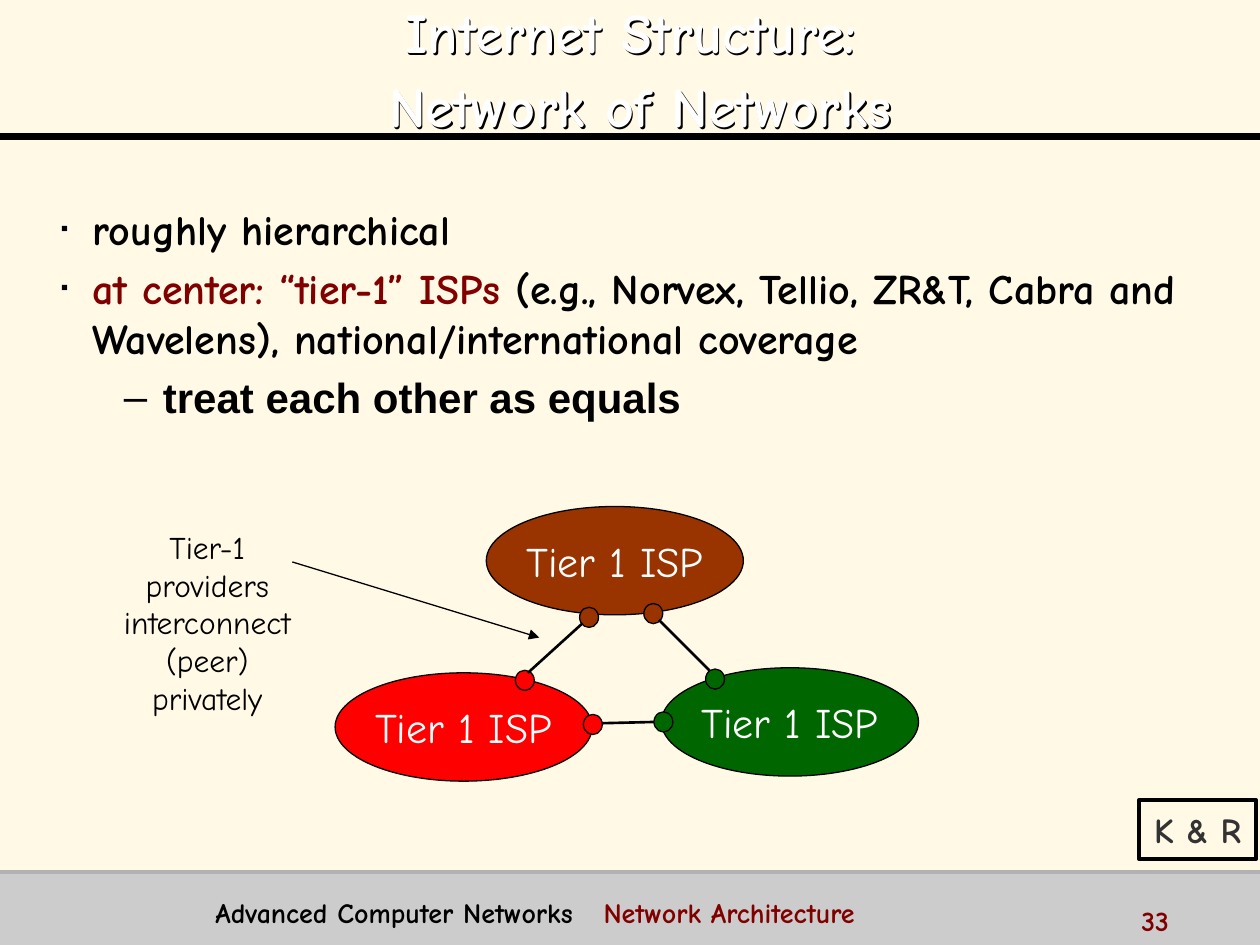
"""Build the slide on tier-1 providers at the centre of the Internet."""

from dataclasses import dataclass

import pptx
import pptx.dml.color
import pptx.enum.shapes
import pptx.enum.text
import pptx.oxml.ns
import pptx.util
from lxml import etree

COLORS = {
    "cream": "FFF9E6", "black": "000000", "white": "FFFFFF", "gray": "CCCCCC",
    "rule": "B2B2B2", "charcoal": "333333", "maroon": "800000",
    "red": "FF0000", "brown": "993300", "green": "006600",
}
COLUMNS, ROWS = 100, 75
WIDTH, HEIGHT = pptx.util.Inches(10), pptx.util.Inches(7.5)
FONT = "Comic Neue"
ISP_SIZE = (20.4, 8.6)
DOT_SIZE = (1.5, 1.6)
OVAL = pptx.enum.shapes.MSO_SHAPE.OVAL
RECTANGLE = pptx.enum.shapes.MSO_SHAPE.RECTANGLE
CENTER = pptx.enum.text.PP_ALIGN.CENTER
MIDDLE = pptx.enum.text.MSO_ANCHOR.MIDDLE


@dataclass
class Provider:
    column: float
    row: float
    color: str
    dots: tuple


@dataclass
class Line:
    start: tuple
    end: tuple
    color: str = "black"
    weight: float = 1.5
    arrow: bool = False


@dataclass
class Span:
    text: str
    color: str = "black"
    size: float = 24
    bold: bool = True
    font: str = FONT


@dataclass
class Bullet:
    spans: tuple
    mark: str
    indent: float
    hanging: float
    percent: int = 100


PROVIDERS = (
    Provider(26.6, 53.4, "red", ((40.9, 53.2), (46.3, 56.7))),
    Provider(38.6, 40.2, "brown", ((51.1, 47.9), (46, 48.2))),
    Provider(52.5, 53, "green", ((56, 53.1), (51.9, 56.5))),
)
RULES = (
    Line((0, 10.8), (COLUMNS, 10.8), weight=4),
    Line((0, 69.2), (COLUMNS, 69.2), "rule", 2),
)
LINKS = (
    Line((47.8, 57.4), (51.9, 57.3)),
    Line((52.3, 49.2), (56.3, 53.2)),
    Line((41.9, 53.4), (46.2, 49.5)),
    Line((23.2, 44.6), (42.8, 50.6), weight=0.75, arrow=True),
)
BULLETS = (
    Bullet((Span("roughly hierarchical"),), "▪", 0.25, 0.25, 50),
    Bullet((Span("at center: “tier-1” ISPs ", "maroon"),
            Span("(e.g., Norvex, Tellio, ZR&T, Cabra and "
                 "Wavelens), national/international coverage")), "▪", 0.25, 0.25, 50),
    Bullet((Span("treat each other as equals", font="Arial"),), "–", 0.81, 0.31),
)


def rgb(name: str) -> pptx.dml.color.RGBColor:
    return pptx.dml.color.RGBColor.from_string(COLORS[name])


def across(columns: float) -> int:
    return round(WIDTH * columns / COLUMNS)


def down(rows: float) -> int:
    return round(HEIGHT * rows / ROWS)


def place(left: float, top: float, width: float, height: float) -> tuple:
    return across(left), down(top), across(width), down(height)


def add_element(parent, tag: str, **attributes: str):
    element = etree.SubElement(parent, pptx.oxml.ns.qn(tag))
    for key, value in attributes.items():
        element.set(key, value)
    return element


def format_run(run, span: Span) -> None:
    run.font.name = span.font
    run.font.size = pptx.util.Pt(span.size)
    run.font.bold = span.bold
    run.font.color.rgb = rgb(span.color)


def write(paragraph, *spans: Span) -> None:
    for span in spans:
        run = paragraph.add_run()
        run.text = span.text
        format_run(run, span)


def add_shape(slide, kind, box: tuple, fill: str = "", line: str = "", weight: float = 0.75):
    shape = slide.shapes.add_shape(kind, *place(*box))
    shape.shadow.inherit = False
    if fill:
        shape.fill.solid()
        shape.fill.fore_color.rgb = rgb(fill)
    else:
        shape.fill.background()
    if line:
        shape.line.color.rgb = rgb(line)
        shape.line.width = pptx.util.Pt(weight)
    else:
        shape.line.fill.background()
    return shape


def label(shape, span: Span) -> None:
    shape.text_frame.word_wrap = False
    shape.text_frame.vertical_anchor = MIDDLE
    paragraph = shape.text_frame.paragraphs[0]
    paragraph.alignment = CENTER
    write(paragraph, span)


def add_line(slide, line: Line) -> None:
    connector = slide.shapes.add_connector(
        pptx.enum.shapes.MSO_CONNECTOR.STRAIGHT,
        across(line.start[0]), down(line.start[1]), across(line.end[0]), down(line.end[1]))
    connector.line.color.rgb = rgb(line.color)
    connector.line.width = pptx.util.Pt(line.weight)
    if line.arrow:
        add_element(connector.line._get_or_add_ln(), "a:tailEnd", type="triangle")
    add_element(connector._element.spPr, "a:effectLst")


def add_text(slide, box: tuple, *spans: Span):
    frame = slide.shapes.add_textbox(*place(*box)).text_frame
    frame.word_wrap = True
    write(frame.paragraphs[0], *spans)
    return frame


def add_title(slide) -> None:
    title = slide.shapes.title
    title.left, title.top, title.width, title.height = place(5.8, -1.1, 88.5, 12.5)
    title.fill.background()
    title.line.fill.background()
    effects = add_element(title._element.spPr, "a:effectLst")
    shadow = add_element(effects, "a:outerShdw", dist="17961", dir="2700000",
                         algn="ctr", rotWithShape="0")
    add_element(shadow, "a:srgbClr", val=COLORS["black"])
    frame = title.text_frame
    frame.text = "Internet Structure:\v Network of Networks"
    frame.auto_size = pptx.enum.text.MSO_AUTO_SIZE.NONE
    frame.vertical_anchor = MIDDLE
    paragraph = frame.paragraphs[0]
    paragraph.alignment = CENTER
    paragraph.line_spacing = 1.1
    for run in paragraph.runs:
        format_run(run, Span(run.text, "white", 32))


def add_bullets(slide) -> None:
    frame = add_text(slide, (3.85, 15.65, 92.3, 50.8))
    for index, bullet in enumerate(BULLETS):
        paragraph = frame.add_paragraph() if index else frame.paragraphs[0]
        if index:
            paragraph.space_before = pptx.util.Pt(4.8)
        properties = paragraph._p.get_or_add_pPr()
        properties.set("marL", str(pptx.util.Inches(bullet.indent)))
        properties.set("indent", str(-pptx.util.Inches(bullet.hanging)))
        color = add_element(properties, "a:buClr")
        add_element(color, "a:srgbClr", val=COLORS["black"])
        add_element(properties, "a:buSzPct", val=str(bullet.percent * 1000))
        add_element(properties, "a:buFont", typeface="Arial")
        add_element(properties, "a:buChar", char=bullet.mark)
        write(paragraph, *bullet.spans)


def add_footer(slide) -> None:
    frame = add_text(slide, (15.3, 70.6, 72.8, 3.1),
                     Span("Advanced Computer Networks\t", size=16),
                     Span("Network Architecture", "maroon", 16))
    frame.margin_left = pptx.util.Inches(0.18)
    tabs = add_element(frame.paragraphs[0]._p.get_or_add_pPr(), "a:tabLst")
    add_element(tabs, "a:tab", pos=str(pptx.util.Inches(3.08)), algn="l")
    add_text(slide, (89.6, 71.2, 10, 2.5), Span("33", "maroon", 16))


def main() -> None:
    presentation = pptx.Presentation()
    presentation.slide_width, presentation.slide_height = WIDTH, HEIGHT
    slide = presentation.slides.add_slide(presentation.slide_layouts.get_by_name("Title Only"))
    slide.background.fill.solid()
    slide.background.fill.fore_color.rgb = rgb("cream")
    add_shape(slide, RECTANGLE, (0, 69.2, COLUMNS, 5.8), "gray")
    for rule in RULES:
        add_line(slide, rule)
    add_title(slide)
    add_bullets(slide)
    for provider in PROVIDERS:
        oval = add_shape(slide, OVAL, (provider.column, provider.row, *ISP_SIZE),
                         provider.color, "black")
        label(oval, Span("Tier 1 ISP", "white", bold=False))
    for provider in PROVIDERS:
        for dot in provider.dots:
            add_shape(slide, OVAL, (*dot, *DOT_SIZE), provider.color, "black")
    for link in LINKS:
        add_line(slide, link)
    caption = add_text(slide, (7.9, 41.4, 17.1, 16), Span(
        "Tier-1 providers interconnect (peer) privately", size=18, bold=False))
    caption.paragraphs[0].alignment = CENTER
    credit = add_shape(slide, RECTANGLE, (90.4, 63.5, 9.3, 4.7), line="black", weight=2)
    label(credit, Span("K & R", "charcoal", 20))
    add_footer(slide)
    presentation.save("out.pptx")


if __name__ == "__main__":
    main()
